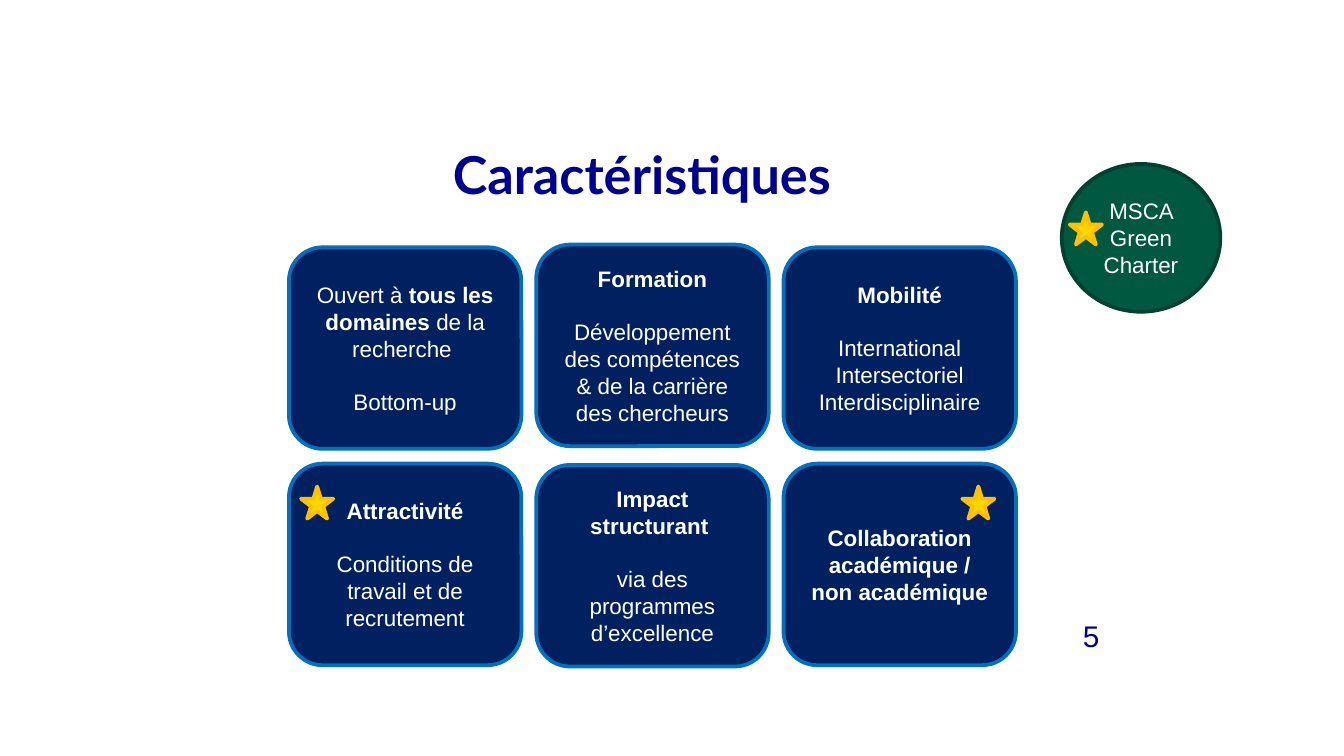
"""Builds the slide on the characteristics of the programme."""
from pptx import Presentation
from pptx.dml.color import RGBColor
from pptx.enum.shapes import MSO_SHAPE
from pptx.enum.text import MSO_ANCHOR, MSO_AUTO_SIZE, PP_ALIGN
from pptx.util import Inches, Pt

ROUNDED, OVAL, STAR = MSO_SHAPE.ROUNDED_RECTANGLE, MSO_SHAPE.OVAL, MSO_SHAPE.STAR_5_POINT
MIDDLE, NO_FIT = MSO_ANCHOR.MIDDLE, MSO_AUTO_SIZE.NONE
CENTER, RIGHT = PP_ALIGN.CENTER, PP_ALIGN.RIGHT

WHITE = RGBColor(0xFF, 0xFF, 0xFF)
INK = RGBColor(0x00, 0x00, 0x91)
NAVY = RGBColor(0x00, 0x20, 0x60)
BLUE = RGBColor(0x00, 0x70, 0xC0)
GREEN = RGBColor(0x00, 0x58, 0x41)
DARK_GREEN = RGBColor(0x00, 0x41, 0x30)
YELLOW = RGBColor(0xFF, 0xD5, 0x00)
AMBER = RGBColor(0xFF, 0xC0, 0x00)

TITLE = "Caractéristiques"
PAGE_NUMBER = "5"
CHARTER = [[("MSCA Green Charter", False)]]
CARDS = [
    [
        [[("Ouvert à ", False), ("tous les domaines ", True), ("de la recherche ", False)],
         [("Bottom-up", False)]],
        [[("Formation", True)],
         [("Développement des compétences & de la carrière des chercheurs", False)]],
        [[("Mobilité", True)],
         [("International", False)], [("Intersectoriel", False)], [("Interdisciplinaire", False)]],
    ],
    [
        [[("Attractivité", True)],
         [("Conditions de travail et de recrutement", False)]],
        [[("Impact structurant ", True)],
         [("via des programmes d’excellence", False)]],
        [[("Collaboration académique / non académique", True)]],
    ],
]
ROW_TOPS = [(1.84, 1.82, 1.84), (3.45, 3.46, 3.45)]
CARD_LEFT, CARD_STEP, CARD_WIDTH, CARD_HEIGHT = 2.15, 1.84, 1.73, 1.5
STARS = [(7.96, 1.58), (2.24, 3.62), (7.16, 3.62)]
STAR_SIZE = 0.24
HEADING_GAP = Pt(14)


def style_frame(frame, insets=(0.1, 0.05)):
    frame.word_wrap = True
    frame.auto_size = NO_FIT
    frame.vertical_anchor = MIDDLE
    frame.margin_left = frame.margin_right = Inches(insets[0])
    frame.margin_top = frame.margin_bottom = Inches(insets[1])


def style_font(font, name, size, color):
    font.name, font.size = name, Pt(size)
    font.color.rgb = color


def add_figure(page, kind, bounds, fill, line):
    shape = page.shapes.add_shape(kind, *map(Inches, bounds))
    shape.shadow.inherit = False
    shape.fill.solid()
    shape.fill.fore_color.rgb = fill
    shape.line.color.rgb = line
    shape.line.width = Pt(2)
    return shape


def write_paragraphs(shape, paragraphs):
    frame = shape.text_frame
    style_frame(frame)
    for index, spans in enumerate(paragraphs):
        para = frame.add_paragraph() if index else frame.paragraphs[0]
        para.alignment = CENTER
        if index == 1:
            para.space_before = HEADING_GAP
        style_font(para.font, "Arial", 12, WHITE)
        for text, bold in spans:
            span = para.add_run()
            span.text = text
            span.font.bold = bold


def write_line(box, text, alignment, name, size):
    style_frame(box.text_frame, (0.06, 0.03))
    para = box.text_frame.paragraphs[0]
    para.text = text
    para.alignment = alignment
    style_font(para.font, name, size, INK)
    return para


def main():
    deck = Presentation()
    deck.slide_width = Inches(10)
    deck.slide_height = deck.slide_width * 9 // 16
    page = deck.slides.add_slide(deck.slide_layouts[5])

    title = page.shapes.title
    title.left, title.top, title.width, title.height = map(Inches, (1.54, 0.91, 6.47, 0.82))
    heading = write_line(title, TITLE, CENTER, "Lato", 28)
    heading.font.bold = True
    heading.line_spacing = 0.9

    number = page.shapes.add_textbox(*map(Inches, (6.55, 4.62, 1.69, 0.22)))
    write_line(number, PAGE_NUMBER, RIGHT, "Arial", 16)

    for tops, row in zip(ROW_TOPS, CARDS):
        for column, (top, paragraphs) in enumerate(zip(tops, row)):
            bounds = (CARD_LEFT + column * CARD_STEP, top, CARD_WIDTH, CARD_HEIGHT)
            write_paragraphs(add_figure(page, ROUNDED, bounds, NAVY, BLUE), paragraphs)

    write_paragraphs(add_figure(page, OVAL, (7.9, 1.22, 1.18, 1.1), GREEN, DARK_GREEN), CHARTER)
    for left, top in STARS:
        add_figure(page, STAR, (left, top, STAR_SIZE, STAR_SIZE), YELLOW, AMBER)

    deck.save("out.pptx")


if __name__ == "__main__":
    main()
